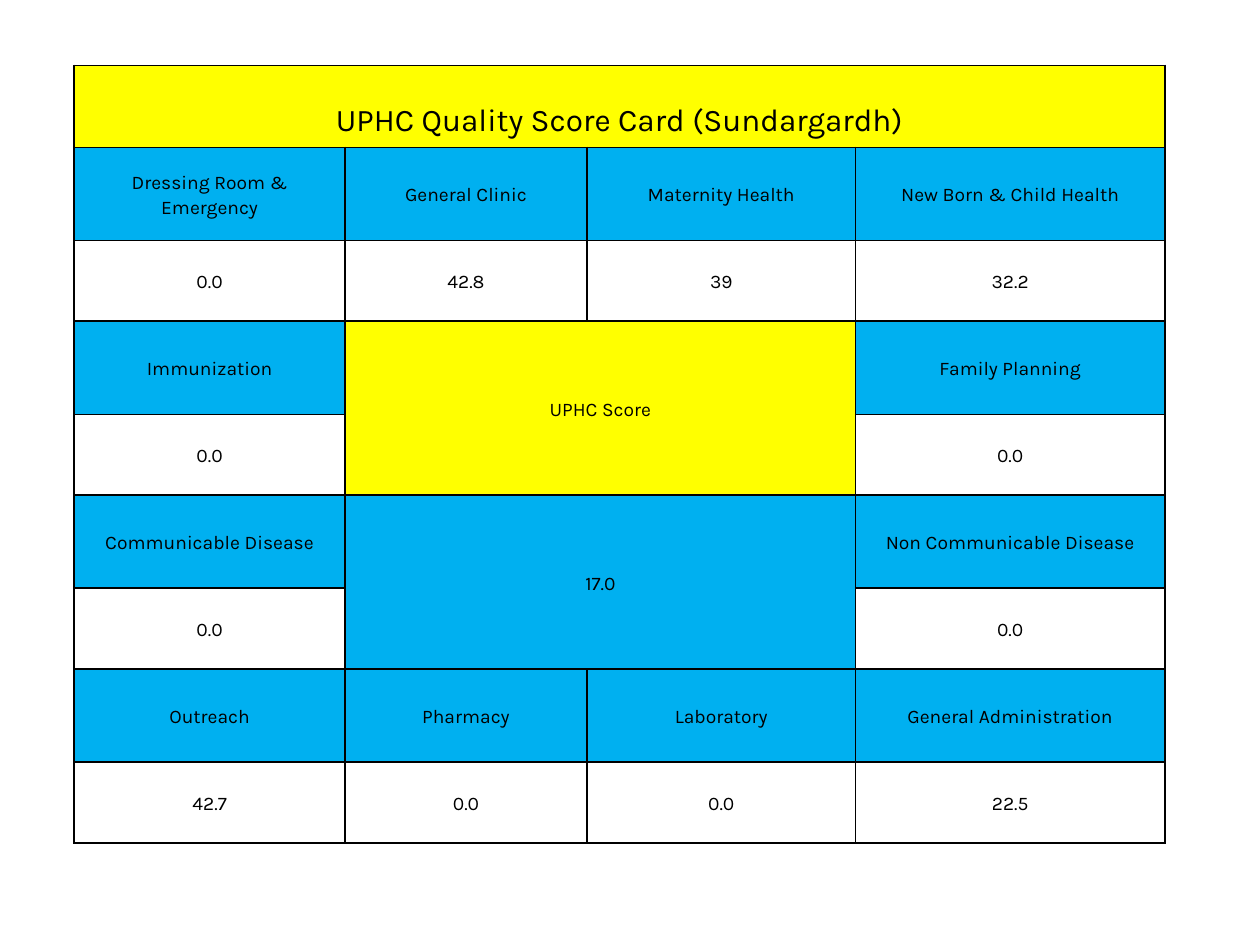
from lxml.etree import SubElement
from pptx import Presentation
from pptx.dml.color import RGBColor
from pptx.enum.text import MSO_ANCHOR, PP_ALIGN
from pptx.oxml.ns import qn
from pptx.util import Pt

COLORS = {"title": "FFFF00", "label": "00B0F0", "text": "000000", "border": "000000"}
SCORE_CARD = [
    ["UPHC Quality Score Card (Sundargardh)", None, None, None],
    ["Dressing Room & Emergency", "General Clinic", "Maternity Health", "New Born & Child Health"],
    ["0.0", "42.8", "39", "32.2"],
    ["Immunization", "UPHC Score", None, "Family Planning"],
    ["0.0", None, None, "0.0"],
    ["Communicable Disease", "17.0", None, "Non Communicable Disease"],
    ["0.0", None, None, "0.0"],
    ["Outreach", "Pharmacy", "Laboratory", "General Administration"],
    ["42.7", "0.0", "0.0", "22.5"],
]
MERGES = [((0, 0), (0, 3)), ((3, 1), (4, 2)), ((5, 1), (6, 2))]
TITLE_CELLS = {(0, 0), (3, 1)}
COLUMN_WIDTHS = [154.8, 138.2, 153.6, 176.6]
TITLE_HEIGHT, LABEL_HEIGHT, SCORE_HEIGHT = 46.8, 53.2, 46.2
LEFT, TOP = 42.4, 37.4

CELL_FORMAT = {
    "vertical_anchor": MSO_ANCHOR.MIDDLE,
    "margin_left": Pt(5), "margin_right": Pt(5),
    "margin_top": Pt(0), "margin_bottom": Pt(0),
}
PARAGRAPH_FORMAT = {"alignment": PP_ALIGN.CENTER, "line_spacing": 1.15}
FONT_FORMAT = {"name": "Karla", "size": Pt(11), "bold": False}


def apply_format(target, values):
    for name, value in values.items():
        setattr(target, name, value)


def add_borders(cell):
    properties = cell._tc.get_or_add_tcPr()
    for side in ("lnL", "lnR", "lnT", "lnB"):
        line = SubElement(properties, qn(f"a:{side}"), w=str(Pt(1)))
        fill = SubElement(line, qn("a:solidFill"))
        SubElement(fill, qn("a:srgbClr"), val=COLORS["border"])


def fill_cell(cell, color):
    if color:
        cell.fill.solid()
        cell.fill.fore_color.rgb = RGBColor.from_string(color)
    else:
        cell.fill.background()


def write_cell(cell, text):
    paragraph = cell.text_frame.paragraphs[0]
    apply_format(paragraph, PARAGRAPH_FORMAT)
    run = paragraph.add_run()
    run.text = text
    apply_format(run.font, FONT_FORMAT)
    run.font.color.rgb = RGBColor.from_string(COLORS["text"])


def main():
    presentation = Presentation()
    presentation.slide_width, presentation.slide_height = Pt(720), Pt(540)
    slide = presentation.slides.add_slide(presentation.slide_layouts[6])

    heights = [TITLE_HEIGHT] + [LABEL_HEIGHT, SCORE_HEIGHT] * 4
    table = slide.shapes.add_table(
        len(heights), len(COLUMN_WIDTHS), Pt(LEFT), Pt(TOP),
        Pt(sum(COLUMN_WIDTHS)), Pt(sum(heights)),
    ).table
    apply_format(table, {"first_row": False, "horz_banding": False})
    for column, width in zip(table.columns, COLUMN_WIDTHS):
        column.width = Pt(width)
    for row, height in zip(table.rows, heights):
        row.height = Pt(height)
    for first, last in MERGES:
        table.cell(*first).merge(table.cell(*last))

    for row_index, texts in enumerate(SCORE_CARD):
        for column_index, text in enumerate(texts):
            cell = table.cell(row_index, column_index)
            apply_format(cell, CELL_FORMAT)
            add_borders(cell)
            label_color = COLORS["label"] if row_index % 2 else None
            is_title = (row_index, column_index) in TITLE_CELLS
            fill_cell(cell, COLORS["title"] if is_title else label_color)
            if text:
                write_cell(cell, text)

    title = table.cell(0, 0)
    title.margin_top = Pt(13.5)
    title.text_frame.paragraphs[0].runs[0].font.size = Pt(18)
    presentation.save("out.pptx")


if __name__ == "__main__":
    main()
